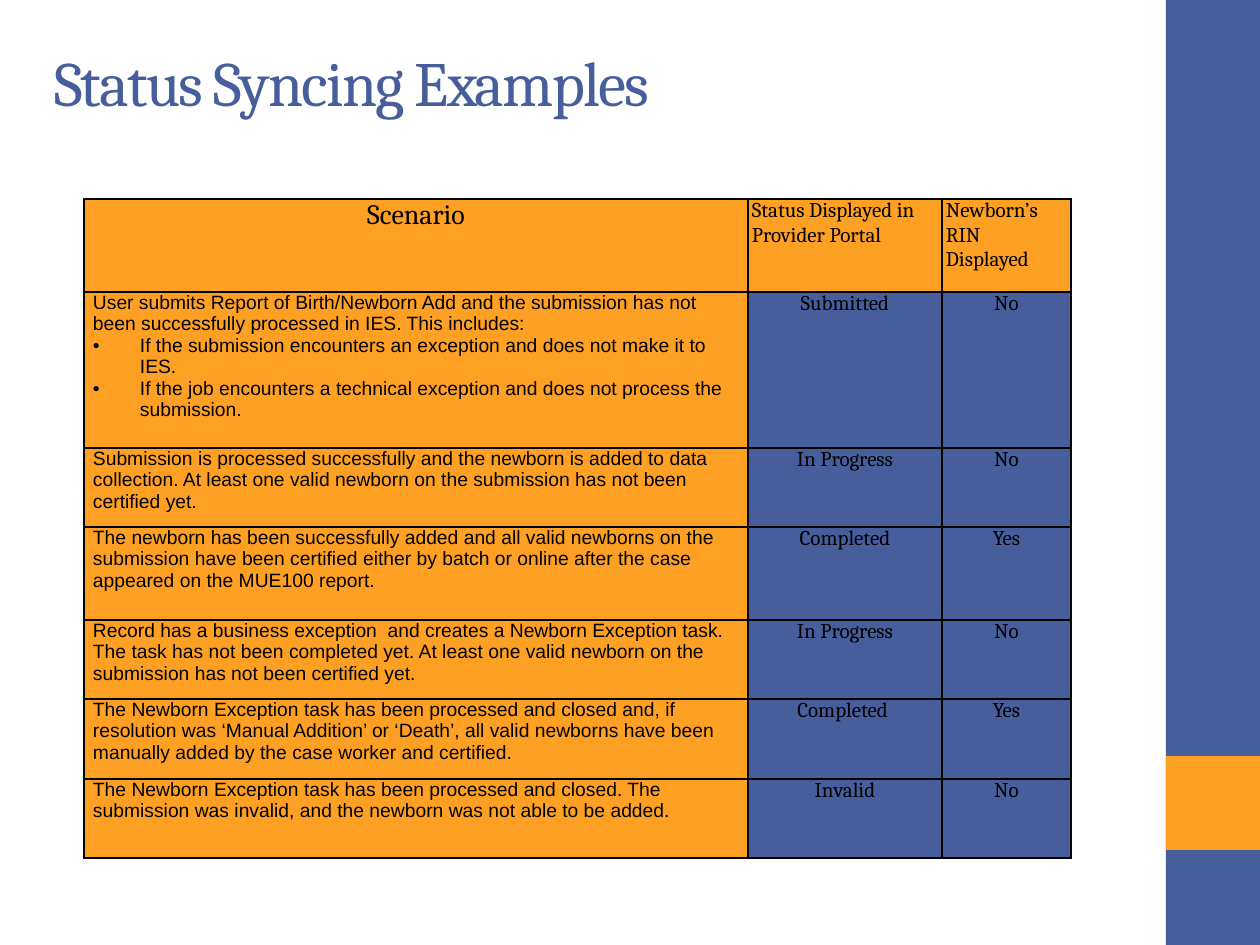
from lxml import etree
from pptx import Presentation, util as u
from pptx.dml.color import RGBColor
from pptx.enum import shapes, text
from pptx.oxml.ns import qn

COLORS = {"blue": "465E9C", "orange": "FDA023", "black": "000000"}
TITLE = "Status Syncing Examples"
TITLE_BOX = (54, 43, 1052, 77)
BANDS = [("blue", (1166, 0, 94, 945)), ("orange", (1166, 756, 94, 94))]

HEADER = ("Scenario", "Status Displayed in Provider Portal", "Newborn’s RIN Displayed")
ROWS = [
    (["User submits Report of Birth/Newborn Add and the submission has not been successfully processed in IES. This includes:",
      "If the submission encounters an exception and does not make it to IES.",
      "If the job encounters a technical exception and does not process the submission."],
     "Submitted", "No"),
    (["Submission is processed successfully and the newborn is added to data collection. At least one valid newborn on the submission has not been certified yet."],
     "In Progress", "No"),
    (["The newborn has been successfully added and all valid newborns on the submission have been certified either by batch or online after the case appeared on the MUE100 report."],
     "Completed", "Yes"),
    (["Record has a business exception  and creates a Newborn Exception task. The task has not been completed yet. At least one valid newborn on the submission has not been certified yet."],
     "In Progress", "No"),
    (["The Newborn Exception task has been processed and closed and, if resolution was ‘Manual Addition’ or ‘Death’, all valid newborns have been manually added by the case worker and certified."],
     "Completed ", "Yes"),
    (["The Newborn Exception task has been processed and closed. The submission was invalid, and the newborn was not able to be added."],
     "Invalid", "No"),
]
TABLE_AT = (84, 199)
COLUMN_WIDTHS = (664, 194, 129)
ROW_HEIGHTS = (93, 156, 79, 93, 79, 80, 79)
CENTER, LEFT = text.PP_ALIGN.CENTER, text.PP_ALIGN.LEFT
FORMATS = {
    "title": {"name": "Cambria", "size": u.Pt(36)},
    "heading": {"name": "Cambria", "size": u.Pt(16)},
    "status": {"name": "Cambria", "size": u.Pt(12)},
    "scenario": {"name": "Arial", "size": u.Pt(11)},
}


def px(value):
    return round(value * 914400 / 126)


def rgb(color):
    return RGBColor.from_string(COLORS[color])


def set_all(target, values):
    for name, value in values.items():
        setattr(target, name, value)


def write(para, words, style, color, align=LEFT):
    para.alignment = align
    span = para.add_run()
    span.text = words
    set_all(span.font, FORMATS[style])
    span.font.color.rgb = rgb(color)
    return span


def add_bullet(para):
    props = para._p.get_or_add_pPr()
    props.set("marL", str(px(47)))
    props.set("indent", str(px(-47)))
    etree.SubElement(props, qn("a:buFont"), typeface="Arial")
    etree.SubElement(props, qn("a:buChar"), char="•")


def add_borders(cell):
    props = cell._tc.get_or_add_tcPr()
    for place, side in enumerate(("a:lnL", "a:lnR", "a:lnT", "a:lnB")):
        line = etree.Element(qn(side), w=str(u.Pt(1)))
        fill = etree.SubElement(line, qn("a:solidFill"))
        etree.SubElement(fill, qn("a:srgbClr"), val=COLORS["black"])
        props.insert(place, line)


def fill_cell(cell, paragraphs, style, align, color, inset):
    cell.fill.solid()
    cell.fill.fore_color.rgb = rgb(color)
    add_borders(cell)
    set_all(cell, {"margin_left": px(inset), "margin_right": px(inset),
                   "margin_top": 0, "margin_bottom": 0})
    for index, words in enumerate(paragraphs):
        frame = cell.text_frame
        para = frame.add_paragraph() if index else frame.paragraphs[0]
        if index:
            add_bullet(para)
        write(para, words, style, "black", align)


def add_title(page):
    box = page.shapes.add_textbox(*map(px, TITLE_BOX))
    set_all(box.text_frame, {"word_wrap": True, "margin_left": 0, "margin_right": 0,
                             "margin_top": 0, "margin_bottom": 0,
                             "vertical_anchor": text.MSO_ANCHOR.MIDDLE})
    span = write(box.text_frame.paragraphs[0], TITLE, "title", "blue")
    span._r.get_or_add_rPr().set("spc", "-100")


def add_status_table(page):
    size = (sum(COLUMN_WIDTHS), sum(ROW_HEIGHTS))
    table = page.shapes.add_table(len(ROW_HEIGHTS), len(COLUMN_WIDTHS),
                                  *map(px, TABLE_AT + size)).table
    set_all(table, {"first_row": False, "horz_banding": False})
    for column, width in zip(table.columns, COLUMN_WIDTHS):
        column.width = px(width)
    for row, height in zip(table.rows, ROW_HEIGHTS):
        row.height = px(height)
    for index, words in enumerate(HEADER):
        style, align = ("status", LEFT) if index else ("heading", CENTER)
        fill_cell(table.cell(0, index), [words], style, align, "orange", 4)
    for number, (scenario, *answers) in enumerate(ROWS, 1):
        fill_cell(table.cell(number, 0), scenario, "scenario", LEFT, "orange", 9)
        for index, answer in enumerate(answers, 1):
            fill_cell(table.cell(number, index), [answer], "status", CENTER, "blue", 4)


def main():
    deck = Presentation()
    set_all(deck, {"slide_width": px(1260), "slide_height": px(945)})
    page = deck.slides.add_slide(deck.slide_layouts[6])
    for color, place in BANDS:
        band = page.shapes.add_shape(shapes.MSO_SHAPE.RECTANGLE, *map(px, place))
        band.shadow.inherit = False
        band.fill.solid()
        band.fill.fore_color.rgb = rgb(color)
        band.line.fill.background()
    add_title(page)
    add_status_table(page)
    deck.save("out.pptx")


if __name__ == "__main__":
    main()
